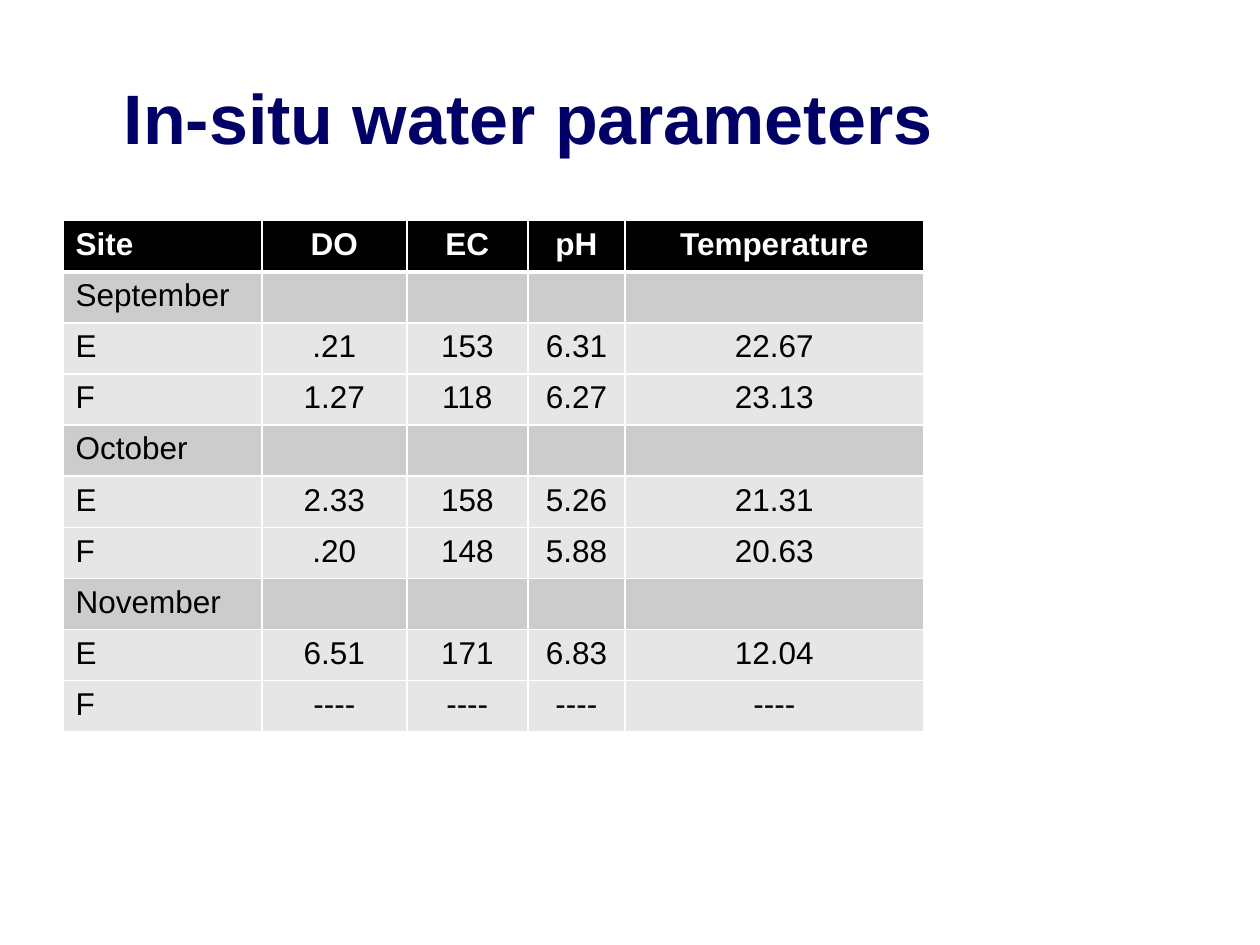
from lxml import etree
from pptx import Presentation
from pptx.dml.color import RGBColor
from pptx.enum.text import MSO_ANCHOR, PP_ALIGN
from pptx.oxml.ns import qn
from pptx.util import Cm, Pt

LEFT, CENTER = PP_ALIGN.LEFT, PP_ALIGN.CENTER
MIDDLE = MSO_ANCHOR.MIDDLE

HEADER = ["Site", "DO", "EC", "pH", "Temperature"]
MONTHS = {
    "September": [["E", ".21", "153", "6.31", "22.67"],
                  ["F", "1.27", "118", "6.27", "23.13"]],
    "October": [["E", "2.33", "158", "5.26", "21.31"],
                ["F", ".20", "148", "5.88", "20.63"]],
    "November": [["E", "6.51", "171", "6.83", "12.04"],
                 ["F", "----", "----", "----", "----"]],
}
COLUMN_WIDTHS = [4.01, 2.92, 2.44, 1.96, 6.02]
ROW_HEIGHT = 1.03


def color(hex_string):
    return RGBColor.from_string(hex_string)


class SlideBuilder:
    font_name = "Arial"
    title_color = "000066"
    header_fill = "000000"
    month_fill = "CCCCCC"
    site_fill = "E6E6E6"
    white = "FFFFFF"
    black = "000000"

    def __init__(self, presentation):
        self.slide = presentation.slides.add_slide(presentation.slide_layouts[5])

    def format_paragraph(self, paragraph, size, hex_string, bold, alignment):
        paragraph.alignment = alignment
        font = paragraph.font
        if paragraph.runs:
            font = paragraph.runs[0].font
        font.name = self.font_name
        font.size = Pt(size)
        font.bold = bold
        font.color.rgb = color(hex_string)

    def add_title(self, text, left, top, width, height):
        title = self.slide.shapes.title
        title.left, title.top = Cm(left), Cm(top)
        title.width, title.height = Cm(width), Cm(height)
        title.text_frame.text = text
        title.text_frame.vertical_anchor = MIDDLE
        self.format_paragraph(title.text_frame.paragraphs[0], 40,
                              self.title_color, True, CENTER)

    def set_borders(self, cell, top, bottom):
        """Draw white cell borders; top and bottom are widths in points."""
        properties = cell._tc.get_or_add_tcPr()
        for side, width in (("L", 1), ("R", 1), ("T", top), ("B", bottom)):
            line = etree.SubElement(properties, qn(f"a:ln{side}"), w=str(Pt(width)))
            fill = etree.SubElement(line, qn("a:solidFill"))
            etree.SubElement(fill, qn("a:srgbClr"), val=self.white)

    def add_table(self, rows, left, top):
        table = self.slide.shapes.add_table(
            len(rows), len(COLUMN_WIDTHS), Cm(left), Cm(top),
            Cm(sum(COLUMN_WIDTHS)), Cm(ROW_HEIGHT * len(rows))).table
        for column, width in zip(table.columns, COLUMN_WIDTHS):
            column.width = Cm(width)
        for row_index, (values, fill) in enumerate(rows):
            table.rows[row_index].height = Cm(ROW_HEIGHT)
            is_header = row_index == 0
            for column_index, value in enumerate(values):
                cell = table.cell(row_index, column_index)
                self.set_borders(cell, top=3 if row_index == 1 else 1,
                                 bottom=3 if is_header else 1)
                cell.fill.solid()
                cell.fill.fore_color.rgb = color(fill)
                cell.text_frame.text = value
                self.format_paragraph(
                    cell.text_frame.paragraphs[0], 18,
                    self.white if is_header else self.black, is_header,
                    CENTER if column_index else LEFT)


def main():
    presentation = Presentation()
    presentation.slide_width, presentation.slide_height = Cm(25.4), Cm(19.05)
    builder = SlideBuilder(presentation)
    builder.add_title("In-situ water parameters", 1.27, 0.76, 18.75, 3.18)

    rows = [(HEADER, builder.header_fill)]
    for month, sites in MONTHS.items():
        rows.append(([month] + [""] * (len(HEADER) - 1), builder.month_fill))
        rows += [(site, builder.site_fill) for site in sites]
    builder.add_table(rows, 1.27, 4.45)
    presentation.save("out.pptx")


if __name__ == "__main__":
    main()
